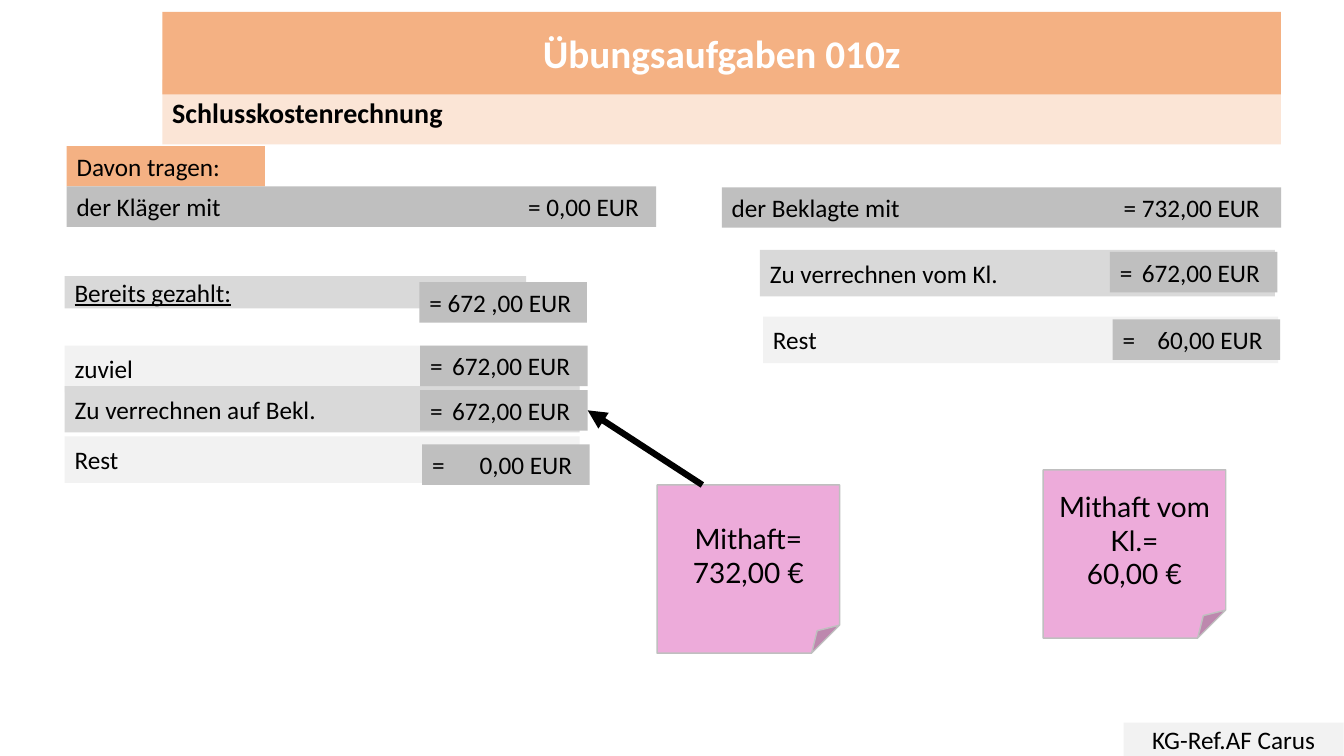
import pptx
import pptx.dml.color
import pptx.enum.shapes
import pptx.enum.text
import pptx.oxml
import pptx.oxml.ns
import pptx.util
from lxml import etree

Cm = pptx.util.Cm
Pt = pptx.util.Pt
SHAPE = pptx.enum.shapes.MSO_SHAPE
ALIGN = pptx.enum.text.PP_ALIGN
qn = pptx.oxml.ns.qn

# Content: lengths in cm
ORANGE, PEACH, PINK = "F4B183", "FBE5D6", "EDABDA"
GREY, MEDIUM, LIGHT = "BFBFBF", "D9D9D9", "F2F2F2"

TITLE = "Übungsaufgaben 010z"
TITLE_PLACE = (4.09, 0.3, 28.19, 2.08)
SUBTITLE = "Schlusskostenrechnung"
SUBTITLE_PLACE = (4.09, 2.01, 28.19, 1.63)
PAID = "Bereits gezahlt:"
PAID_PLACE = (1.63, 6.96, 11.63, 0.81)
SHARES = "Davon tragen:"
SHARES_PLACE = (1.68, 3.68, 5, 1.02)
FOOTER = "KG-Ref.AF Carus"
FOOTER_PLACE = (28.32, 18.21, 5.54, 0.84)

# text, place, right tab
PARTIES = [
    ("der Kläger mit\t= 0,00 EUR", (1.68, 4.7, 14.86, 1.02), 14.17),
    ("der Beklagte mit\t= 732,00 EUR", (18.19, 4.72, 14.1, 1.02), 13.31),
]

# label, left, top, fill
LABEL_SIZE = (12.98, 1.17)
LABELS = [
    ("zuviel", 1.63, 8.71, LIGHT),
    ("Zu verrechnen auf Bekl.", 1.63, 9.73, MEDIUM),
    ("Rest", 1.63, 11, LIGHT),
    ("Zu verrechnen vom Kl.", 19.15, 6.3, MEDIUM),
    ("Rest", 19.23, 7.98, LIGHT),
]

# amount, left, top
AMOUNT_SIZE = (4.22, 1.02)
AMOUNT_TAB = 3.53
AMOUNTS = [
    ("= 672 ,00 EUR", 10.57, 7.11),
    ("=\t672,00 EUR", 10.59, 8.71),
    ("=\t672,00 EUR", 10.59, 9.83),
    ("=\t0,00 EUR", 10.64, 11.2),
    ("=\t672,00 EUR", 27.97, 6.35),
    ("=\t60,00 EUR", 28.04, 8.05),
]

# lines, left, top
NOTE_SIZE = (4.6, 4.24)
NOTES = [
    (["Mithaft=", "732,00 €"], 16.56, 12.22),
    (["Mithaft vom Kl.=", "60,00 €"], 26.29, 11.84),
]
ARROW = (17.7, 12.22, 14.81, 10.34)


def color(text):
    return pptx.dml.color.RGBColor.from_string(text)


def write(box, lines, align=ALIGN.LEFT, tab=None, ink="000000", **font):
    frame = box.text_frame
    frame.word_wrap = True
    frame.auto_size = pptx.enum.text.MSO_AUTO_SIZE.NONE
    frame.vertical_anchor = pptx.enum.text.MSO_ANCHOR.MIDDLE
    look = {"name": "Calibri", "size": Pt(18), **font}
    for index, line in enumerate(lines):
        para = frame.add_paragraph() if index else frame.paragraphs[0]
        para.alignment = align
        if tab:
            stops = etree.SubElement(para._p.get_or_add_pPr(), qn("a:tabLst"))
            etree.SubElement(stops, qn("a:tab"), pos=str(Cm(tab)), algn="r")
        span = para.add_run()
        span.text = line
        span.font.color.rgb = color(ink)
        for name, value in look.items():
            setattr(span.font, name, value)


def paint(box, fill):
    box.fill.solid()
    box.fill.fore_color.rgb = color(fill)


def add_box(page, place, fill, lines, kind=SHAPE.RECTANGLE, **text):
    box = page.shapes.add_shape(kind, *map(Cm, place))
    box.shadow.inherit = False
    paint(box, fill)
    box.line.fill.background()
    write(box, lines, **text)
    return box


def add_title(page):
    title = page.shapes.title
    for name, value in zip(("left", "top", "width", "height"), TITLE_PLACE):
        setattr(title, name, Cm(value))
    shape_format = title.element.spPr
    outline = etree.SubElement(shape_format, qn("a:prstGeom"), prst="roundRect")
    etree.SubElement(outline, qn("a:avLst"))
    paint(title, ORANGE)
    write(title, [TITLE], align=ALIGN.CENTER, ink="FFFFFF", size=Pt(28), bold=True)
    # The title lies over the subtitle band
    title.element.getparent().append(title.element)


def add_arrow(page):
    arrow = page.shapes.add_connector(
        pptx.enum.shapes.MSO_CONNECTOR.STRAIGHT, *map(Cm, ARROW))
    arrow.line.color.rgb = color("000000")
    arrow.line.width = Pt(4.5)
    etree.SubElement(arrow.line._get_or_add_ln(), qn("a:tailEnd"), type="triangle")
    etree.SubElement(arrow.element.spPr, qn("a:effectLst"))


def main():
    deck = pptx.Presentation()
    deck.slide_width, deck.slide_height = Cm(33.87), Cm(19.05)
    page = deck.slides.add_slide(deck.slide_layouts[5])

    # Headings and footer
    add_box(page, SUBTITLE_PLACE, PEACH, [SUBTITLE], size=Pt(20), bold=True)
    add_title(page)
    add_box(page, SHARES_PLACE, ORANGE, [SHARES])
    add_box(page, PAID_PLACE, MEDIUM, [PAID], underline=True)
    add_box(page, FOOTER_PLACE, LIGHT, [FOOTER], align=ALIGN.CENTER)

    # Shares of both parties
    for text, place, tab in PARTIES:
        add_box(page, place, GREY, [text], tab=tab)

    # Settlement rows
    for text, left, top, fill in LABELS:
        add_box(page, (left, top, *LABEL_SIZE), fill, [text])
    for text, left, top in AMOUNTS:
        add_box(page, (left, top, *AMOUNT_SIZE), GREY, [text], tab=AMOUNT_TAB)

    # Liability notes
    for lines, left, top in NOTES:
        note = add_box(page, (left, top, *NOTE_SIZE), PINK, lines,
                       kind=SHAPE.FOLDED_CORNER, align=ALIGN.CENTER,
                       name="Lato", size=Pt(20))
        note.line.color.rgb = color(GREY)
        note.line.width = Pt(1)
    add_arrow(page)

    deck.save("out.pptx")


if __name__ == "__main__":
    main()
